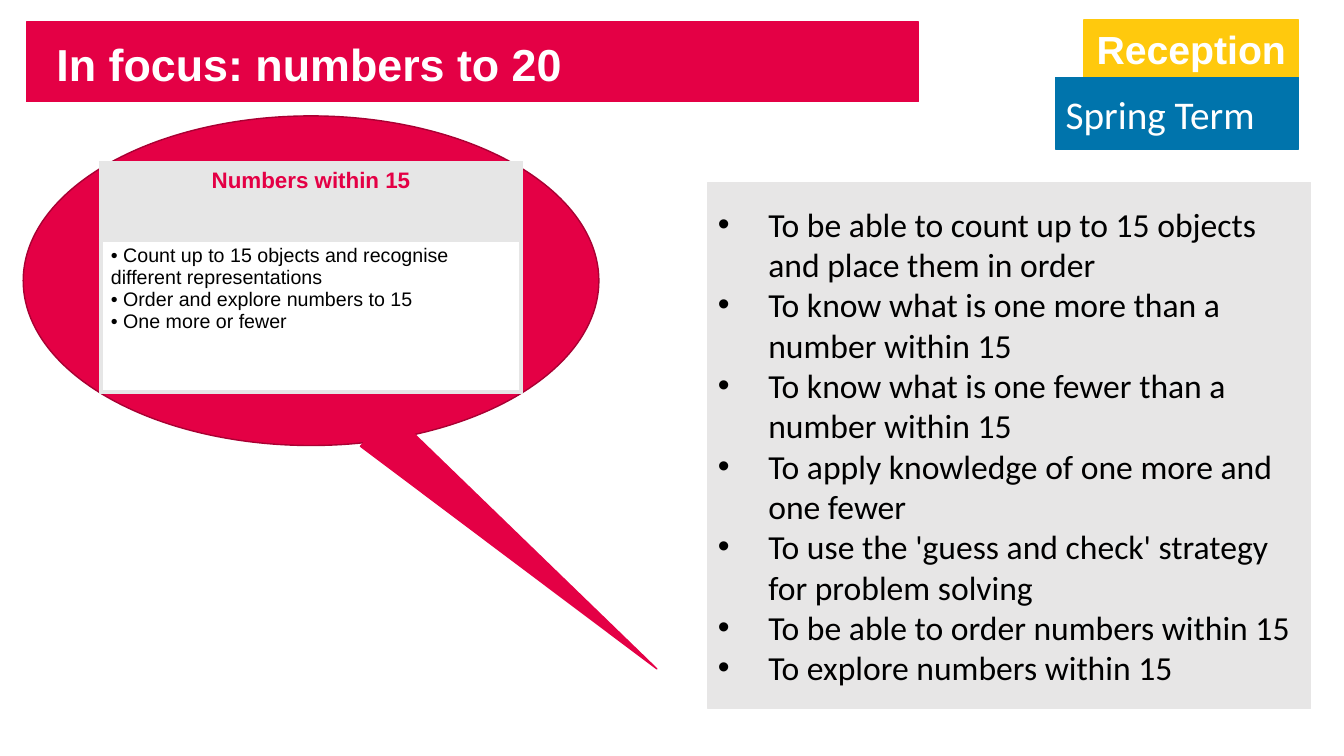
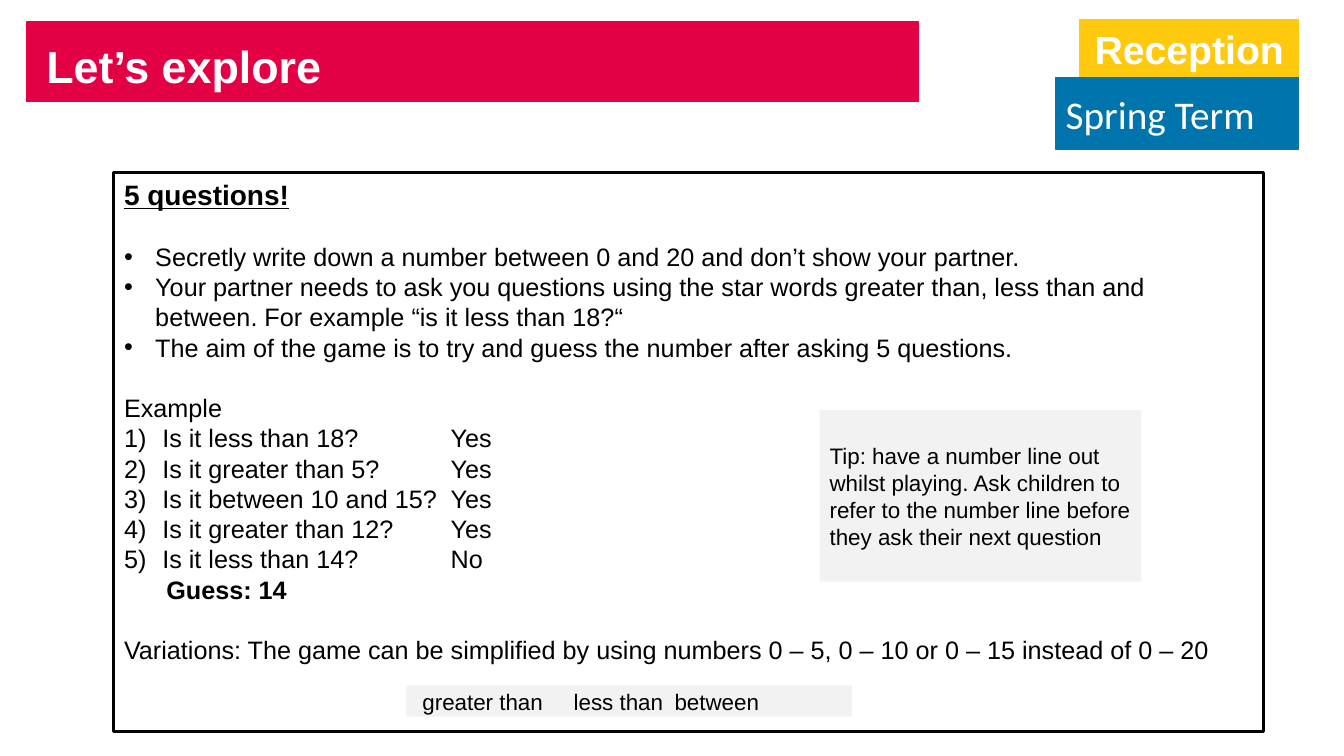
import pptx
import pptx.util
import pptx.dml.color
import pptx.enum.shapes
import pptx.enum.text
import pptx.oxml
import pptx.oxml.ns
import lxml.etree

Inches = pptx.util.Inches
Pt = pptx.util.Pt
Color = pptx.dml.color.RGBColor.from_string
Shape = pptx.enum.shapes.MSO_SHAPE
Align = pptx.enum.text.PP_ALIGN
Anchor = pptx.enum.text.MSO_ANCHOR
qn = pptx.oxml.ns.qn


class Theme:
    red, dark_red = "E40045", "A90033"
    yellow, blue = "FFC90D", "0074AC"
    panel, grid, tip = "E7E6E6", "E6E6E6", "F2F2F2"
    white, black = "FFFFFF", "000000"
    sans, body = "Arial", "Calibri"
    title, tag, goals, heading, text, note, cell = 32, 28, 24, 20, 18, 16, 14
    gap = 21.6


def style_box(box, fill, line=None, weight=1, anchor=Anchor.MIDDLE):
    if fill:
        box.fill.solid()
        box.fill.fore_color.rgb = Color(fill)
    else:
        box.fill.background()
    if line:
        box.line.color.rgb = Color(line)
        box.line.width = Pt(weight)
    else:
        box.line.fill.background()
    box.text_frame.word_wrap = True
    box.text_frame.auto_size = pptx.enum.text.MSO_AUTO_SIZE.NONE
    box.text_frame.vertical_anchor = anchor


def add_line(frame, text, size, name=Theme.sans, color=Theme.black, bold=False,
             align=Align.LEFT, bullet=None, indent=0, hanging=0, stops=(), before=0):
    para = frame.add_paragraph() if frame.text else frame.paragraphs[0]
    para.text = text
    para.alignment = align
    para.space_before = Pt(before)
    props = para._p.get_or_add_pPr()
    props.set("marL", str(Inches(indent)))
    props.set("indent", str(-Inches(hanging)))
    if bullet == "number":
        lxml.etree.SubElement(props, qn("a:buFont"), typeface="+mj-lt")
        lxml.etree.SubElement(props, qn("a:buAutoNum"), type="arabicParenR")
    elif bullet:
        lxml.etree.SubElement(props, qn("a:buFont"), typeface=Theme.sans)
        lxml.etree.SubElement(props, qn("a:buChar"), char=bullet)
    else:
        lxml.etree.SubElement(props, qn("a:buNone"))
    if stops:
        tabs = lxml.etree.SubElement(props, qn("a:tabLst"))
        for stop in stops:
            lxml.etree.SubElement(tabs, qn("a:tab"), pos=str(Inches(stop)), algn="l")
    para.font.size = Pt(size)
    para.font.name = name
    para.font.bold = bold
    para.font.color.rgb = Color(color)
    return para


deck = pptx.Presentation()
deck.slide_width, deck.slide_height = Inches(13.33), Inches(7.5)
layout = deck.slide_layouts[1]
headers = [("In focus: numbers to 20", 0.46, 0.31, 10.75),
           ("Let’s explore", 0.36, 0.33, 10.71)]
pages = []
for text, left, top, tag_left in headers:
    page = deck.slides.add_slide(layout)
    pages.append(page)
    title = page.shapes.title
    title.left, title.top, title.width, title.height = map(Inches, (left, top, 8.5, 0.64))
    style_box(title, None)
    add_line(title.text_frame, text, Theme.title, color=Theme.white, bold=True)
    year = page.shapes.add_shape(Shape.RECTANGLE, Inches(tag_left), Inches(0.2),
                                 Inches(12.88 - tag_left), Inches(0.57))
    term = page.shapes.add_shape(Shape.RECTANGLE, Inches(10.47), Inches(0.77),
                                 Inches(2.41), Inches(0.71))
    for tag, fill in [(year, Theme.yellow), (term, Theme.blue)]:
        tag.shadow.inherit = False
        style_box(tag, fill, fill)
    add_line(year.text_frame, "Reception", Theme.tag, color=Theme.white, bold=True,
             align=Align.CENTER)
    add_line(term.text_frame, "Spring Term", Theme.tag, Theme.body, Theme.white)

focus, explore = pages
band = focus.shapes.add_shape(Shape.RECTANGLE, Inches(0.26), Inches(0.22),
                              Inches(8.85), Inches(0.79))
band.shadow.inherit = False
style_box(band, Theme.red, Theme.red)
deck.slide_master.shapes._spTree.insert(2, band._element)

goals = focus.placeholders[1]
goals.left, goals.top, goals.width, goals.height = map(Inches, (7.02, 1.81, 5.98, 5.22))
style_box(goals, Theme.panel, Theme.panel)
for text in ["To be able to count up to 15 objects and place them in order",
             "To know what is one more than a number within 15",
             "To know what is one fewer than a number within 15",
             "To apply knowledge of one more and one fewer",
             "To use the 'guess and check' strategy for problem solving",
             "To be able to order numbers within 15",
             "To explore numbers within 15"]:
    add_line(goals.text_frame, text, Theme.goals, Theme.body,
             bullet="•", indent=0.5, hanging=0.5)

bubble = focus.shapes.add_shape(Shape.OVAL, Inches(0.23), Inches(1.15),
                                Inches(5.71), Inches(3.27))
bubble.shadow.inherit = False
style_box(bubble, Theme.red, Theme.dark_red)

frame = focus.shapes.add_table(2, 1, Inches(1), Inches(1.62), Inches(4.17), Inches(2.27))
table = frame.table
table.first_row = table.horz_banding = False
for row, height, fill in zip(table.rows, (0.76, 1.51), (Theme.grid, Theme.white)):
    row.height = Inches(height)
    cell = row.cells[0]
    props = cell._tc.get_or_add_tcPr()
    for side in ("a:lnL", "a:lnR", "a:lnT", "a:lnB"):
        edge = lxml.etree.SubElement(props, qn(side), w=str(Pt(3)))
        paint = lxml.etree.SubElement(edge, qn("a:solidFill"))
        lxml.etree.SubElement(paint, qn("a:srgbClr"), val=Theme.grid)
    cell.fill.solid()
    cell.fill.fore_color.rgb = Color(fill)
add_line(table.cell(0, 0).text_frame, "Numbers within 15", Theme.note,
         color=Theme.red, bold=True, align=Align.CENTER)
for text in [" Count up to 15 objects and recognise different representations",
             " Order and explore numbers to 15",
             " One more or fewer"]:
    add_line(table.cell(1, 0).text_frame, text, Theme.cell, bullet="•")

pointer = focus.shapes.add_shape(Shape.ISOSCELES_TRIANGLE, Inches(4.89), Inches(3.61),
                                 Inches(0.46), Inches(3.67))
pointer.shadow.inherit = False
pointer.rotation = 130.5
style_box(pointer, Theme.red, Theme.red)

game = explore.placeholders[1]
game.left, game.top, game.width, game.height = map(Inches, (1.13, 1.71, 11.4, 5.55))
style_box(game, None, Theme.black, 2.25, Anchor.TOP)
rules = game.text_frame
add_line(rules, "5 questions!", Theme.heading, bold=True).font.underline = True
for before, text in [
        (Theme.gap, "Secretly write down a number between 0 and 20 and don’t show your partner."),
        (0, "Your partner needs to ask you questions using the star words greater than, "
            "less than and between. For example “is it less than 18?“"),
        (0, "The aim of the game is to try and guess the number after asking 5 questions.")]:
    add_line(rules, text, Theme.text, bullet="•", indent=0.31, hanging=0.31, before=before)
add_line(rules, "Example", Theme.text, before=Theme.gap)
for text in ["Is it less than 18?\tYes", "Is it greater than 5?\tYes",
             "Is it between 10 and 15?\tYes", "Is it greater than 12?\tYes",
             "Is it less than 14?\tNo"]:
    add_line(rules, text, Theme.text, bullet="number", indent=0.38, hanging=0.38, stops=[3.24])
add_line(rules, "Guess: 14", Theme.text, bold=True, indent=0.42)
add_line(rules, "Variations: The game can be simplified by using numbers 0 – 5, 0 – 10 or 0 – 15 "
         "instead of 0 – 20", Theme.text, before=Theme.gap)

for text, box, inset, stops in [
        ("greater than\tless than\tbetween", (4.03, 6.8, 4.42, 0.31), 0.16, (1.57, 2.88)),
        ("Tip: have a number line out whilst playing. Ask children to refer to the number line "
         "before they ask their next question", (8.13, 4.07, 3.19, 1.7), 0.1, ())]:
    note = explore.shapes.add_shape(Shape.RECTANGLE, *map(Inches, box))
    note.shadow.inherit = False
    style_box(note, Theme.tip)
    note.text_frame.margin_left = Inches(inset)
    add_line(note.text_frame, text, Theme.note, stops=stops)

deck.save("out.pptx")
